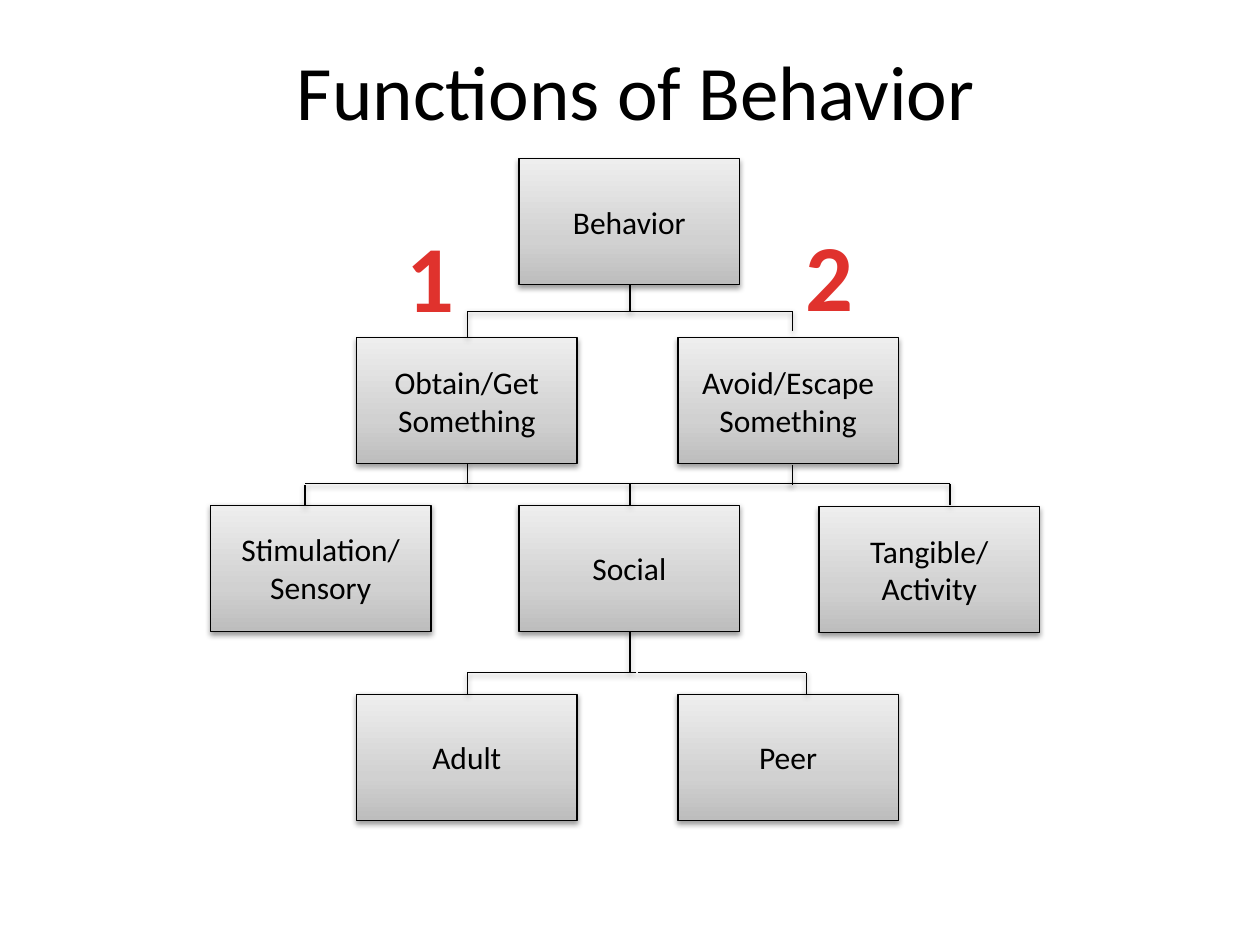
from pptx import Presentation
from pptx import util as u
from pptx.dml.color import RGBColor
from pptx.enum import shapes, text
from pptx.oxml import parse_xml
from pptx.oxml.ns import nsdecls

BLACK = RGBColor(0x00, 0x00, 0x00)
GREYS = [(0, RGBColor(0xBD, 0xBD, 0xBD)), (35, RGBColor(0xD1, 0xD1, 0xD1)), (100, RGBColor(0xEE, 0xEE, 0xEE))]
REDS = [(25, RGBColor(0xE0, 0x32, 0x2D)), (100, RGBColor(0xA2, 0x20, 0x1C))]
FONT = "Calibri"
SHADOW = (
    f'<a:effectLst {nsdecls("a")}><a:outerShdw blurRad="40000" dist="20000" dir="5400000" rotWithShape="0">'
    f'<a:srgbClr val="{BLACK}"><a:alpha val="38000"/></a:srgbClr></a:outerShdw></a:effectLst>'
)


def gradient(stops, angle):
    marks = "".join(f'<a:gs pos="{at * 1000}"><a:srgbClr val="{color}"/></a:gs>' for at, color in stops)
    return parse_xml(
        f'<a:gradFill {nsdecls("a")} rotWithShape="1"><a:gsLst>{marks}</a:gsLst>'
        f'<a:lin ang="{angle * 60000}" scaled="0"/></a:gradFill>'
    )


def add_line(para, wording, size):
    para.alignment = text.PP_ALIGN.CENTER
    span = para.add_run()
    span.text = wording
    span.font.name = FONT
    span.font.size = u.Pt(size)
    span.font.color.rgb = BLACK
    return span


deck = Presentation()
deck.slide_width, deck.slide_height = u.Inches(10), u.Inches(7.5)
page = deck.slides.add_slide(deck.slide_layouts[5])

title = page.shapes.title
title.left, title.top, title.width, title.height = (u.Inches(n) for n in (0.55, 0.09, 9, 1.25))
title.text_frame.vertical_anchor = text.MSO_ANCHOR.MIDDLE
add_line(title.text_frame.paragraphs[0], "Functions of Behavior", 44)

BOX_WIDTH, BOX_HEIGHT = 1.75, 1
LEFT, MIDDLE, RIGHT = 2.83, 4.12, 5.38
boxes = [
    (MIDDLE, 1.26, ["Behavior"]),
    (LEFT, 2.68, ["Obtain/Get", "Something"]),
    (RIGHT, 2.68, ["Avoid/Escape Something"]),
    (6.5, 4.02, ["Tangible/", "Activity"]),
    (MIDDLE, 4.01, ["Social"]),
    (1.67, 4.01, ["Stimulation/", "Sensory"]),
    (RIGHT, 5.51, ["Peer"]),
    (LEFT, 5.51, ["Adult"]),
]
for left, top, lines in boxes:
    box = page.shapes.add_shape(
        shapes.MSO_SHAPE.FLOWCHART_PROCESS,
        u.Inches(left), u.Inches(top), u.Inches(BOX_WIDTH), u.Inches(BOX_HEIGHT),
    )
    box.line.color.rgb = BLACK
    box.line.width = u.Pt(0.75)
    properties = box._element.spPr
    properties.insert(2, gradient(GREYS, 270))
    properties.append(parse_xml(SHADOW))
    frame = box.text_frame
    frame.vertical_anchor = text.MSO_ANCHOR.MIDDLE
    for index, wording in enumerate(lines):
        para = frame.add_paragraph() if index else frame.paragraphs[0]
        add_line(para, wording, 18)

stems = [
    (5, 2.26, 2.47), (3.71, 2.47, 2.68), (6.29, 2.47, 2.63),
    (3.71, 3.68, 3.84), (6.29, 3.69, 3.85),
    (2.42, 3.85, 4.02), (5, 3.84, 4.01), (7.54, 3.84, 4.01),
    (5, 5.01, 5.34), (3.71, 5.34, 5.51), (6.4, 5.34, 5.51),
]
bars = [
    (2.47, 5, 3.71), (2.47, 6.29, 5),
    (3.84, 3.71, 2.42), (3.84, 5, 3.71), (3.84, 6.29, 5), (3.84, 7.54, 6.25),
    (5.34, 5.05, 3.71), (5.34, 6.4, 5.06),
]
branches = [(x, top, x, bottom) for x, top, bottom in stems]
branches += [(start, y, end, y) for y, start, end in bars]
for ends in branches:
    branch = page.shapes.add_connector(shapes.MSO_CONNECTOR.STRAIGHT, *(u.Inches(n) for n in ends))
    branch.line.color.rgb = BLACK
    branch.line.width = u.Pt(0.75)
    branch._element.spPr.append(parse_xml(SHADOW))

for left, top, digit in [(3.12, 1.68, "1"), (6.29, 1.67, "2")]:
    number = page.shapes.add_textbox(u.Inches(left), u.Inches(top), u.Inches(0.59), u.Inches(1.01))
    frame = number.text_frame
    frame.word_wrap = False
    frame.auto_size = text.MSO_AUTO_SIZE.SHAPE_TO_FIT_TEXT
    span = add_line(frame.paragraphs[0], digit, 54)
    span.font.bold = True
    span.font.fill.background()
    properties = span._r.get_or_add_rPr()
    properties.set("spc", "50")
    properties.replace(properties[0], gradient(REDS, 90))

deck.save("out.pptx")
